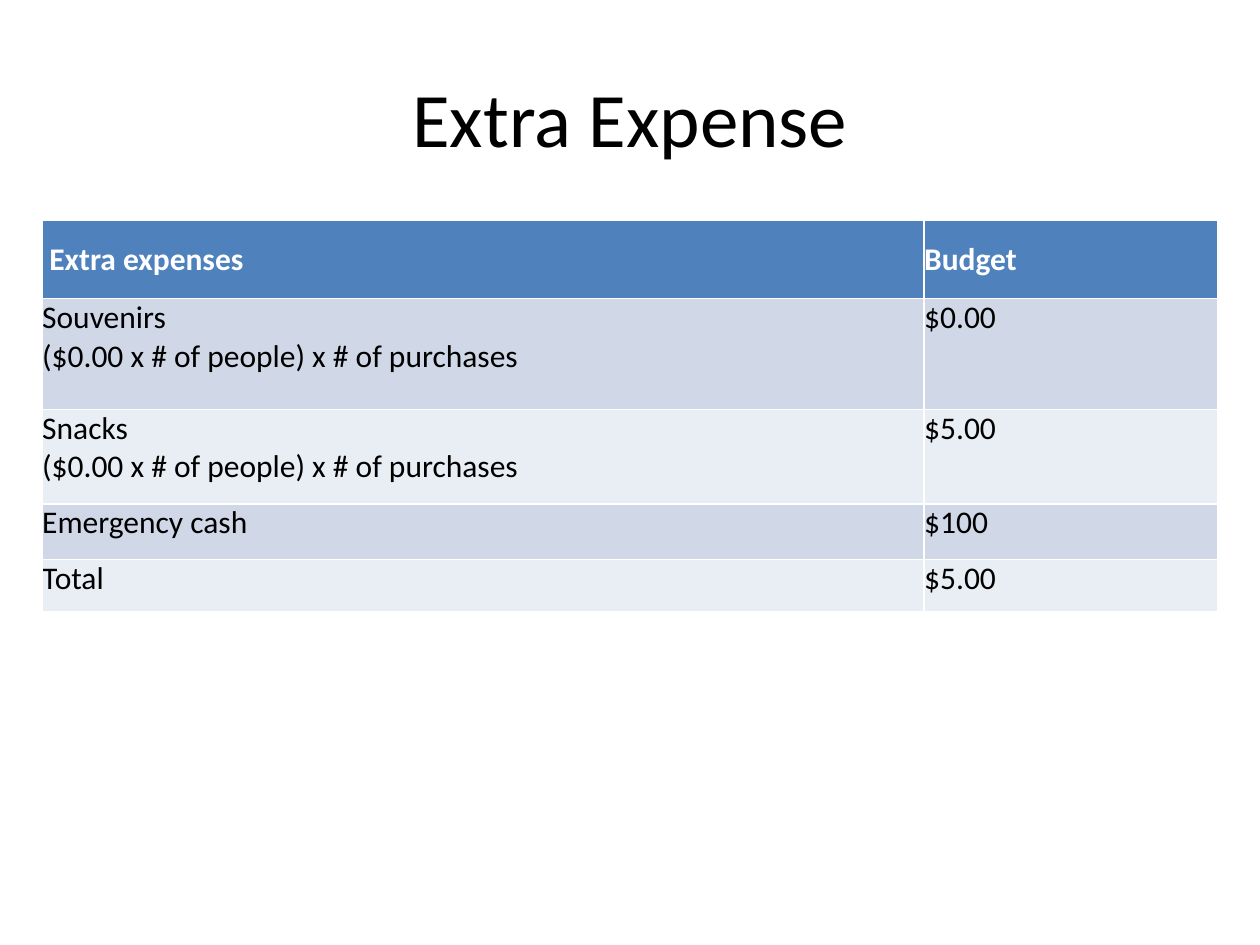
from pptx import Presentation
from pptx import util as u
from pptx.dml.color import RGBColor
from pptx.enum import text

WIDE, HIGH = 10, 7.5
HUES = {"ink": "000000", "head": "4F81BD", "pale": "FFFFFF",
        "odd": "D0D8E8", "even": "E9EDF4"}
COLS = [7, 2.33]
ROWS = [0.62, 0.88, 0.75, 0.44, 0.42]
COSTS = [
    (" Extra expenses", "Budget"),
    ("Souvenirs\n($0.00 x # of people) x # of purchases", "$0.00"),
    ("Snacks\n($0.00 x # of people) x # of purchases", "$5.00"),
    ("Emergency cash", "$100"),
    ("Total", "$5.00"),
]
FLUSH = dict.fromkeys(
    ("margin_left", "margin_right", "margin_top", "margin_bottom"), 0)
TITLE = {"size": u.Pt(44), "name": "Calibri", "bold": False}
HEAD = {"size": u.Pt(18), "name": "Calibri", "bold": True}
BODY = {**HEAD, "bold": False}


def apply(item, form):
    for key, value in form.items():
        setattr(item, key, value)


def hue(name):
    return RGBColor.from_string(HUES[name])


def write(frame, words, form, ink, align):
    frame.text = words
    for para in frame.paragraphs:
        para.alignment = align
        for run in para.runs:
            apply(run.font, form)
            run.font.color.rgb = hue(ink)


def add_title(slide, words):
    box = slide.shapes.add_textbox(
        u.Inches(WIDE * 0.05), u.Inches(HIGH * 0.04),
        u.Inches(WIDE * 0.9), u.Inches(1.25))
    apply(box.text_frame, {"word_wrap": True,
                           "vertical_anchor": text.MSO_ANCHOR.MIDDLE})
    write(box.text_frame, words, TITLE, "ink", text.PP_ALIGN.CENTER)


def fill_cell(cell, words, row):
    top = row == 0
    shade = "head" if top else "odd" if row % 2 else "even"
    anchor = text.MSO_ANCHOR.MIDDLE if top else text.MSO_ANCHOR.TOP
    apply(cell, {**FLUSH, "vertical_anchor": anchor})
    cell.fill.solid()
    cell.fill.fore_color.rgb = hue(shade)
    write(cell.text_frame, words, HEAD if top else BODY,
          "pale" if top else "ink", text.PP_ALIGN.LEFT)


def add_costs(slide):
    span = sum(COLS)
    table = slide.shapes.add_table(
        len(ROWS), len(COLS), u.Inches((WIDE - span) / 2), u.Inches(1.75),
        u.Inches(span), u.Inches(sum(ROWS))).table
    for col, width in zip(table.columns, COLS):
        col.width = u.Inches(width)
    for row, height in zip(table.rows, ROWS):
        row.height = u.Inches(height)
    for r, line in enumerate(COSTS):
        for c, words in enumerate(line):
            fill_cell(table.cell(r, c), words, r)


def main():
    deck = Presentation()
    apply(deck, {"slide_width": u.Inches(WIDE),
                 "slide_height": u.Inches(HIGH)})
    slide = deck.slides.add_slide(deck.slide_layouts[6])
    add_title(slide, "Extra Expense")
    add_costs(slide)
    deck.save("out.pptx")


if __name__ == "__main__":
    main()
